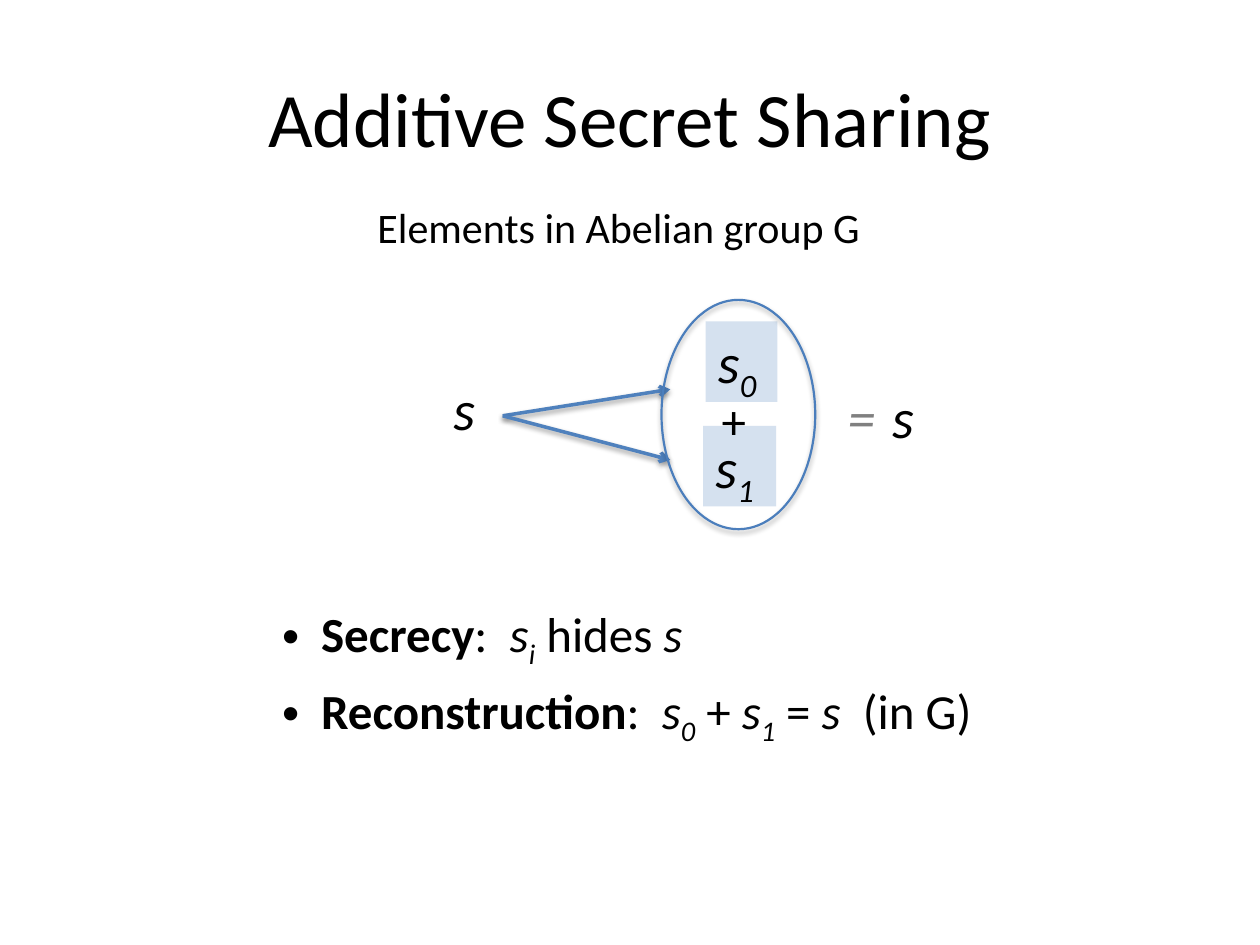
import pptx
import pptx.util
import pptx.dml.color
import pptx.enum.shapes
import pptx.enum.text
import pptx.oxml
import pptx.oxml.ns
from lxml import etree

RGB = pptx.dml.color.RGBColor
BLACK = RGB(0, 0, 0)
GRAY = RGB(0x80, 0x80, 0x80)
PALE = RGB(0xB9, 0xCD, 0xE5)
BLUE = RGB(0x4F, 0x81, 0xBD)
OUTLINE = RGB(0x4B, 0x7E, 0xBC)
WIDTH, HEIGHT = 10, 7.5
FONT = "Calibri"
SHAPE = pptx.enum.shapes.MSO_SHAPE
CENTER = pptx.enum.text.PP_ALIGN.CENTER


def inches(*values):
    return [pptx.util.Inches(v) for v in values]


def add_sub(parent, tag, **attrs):
    return etree.SubElement(parent, pptx.oxml.ns.qn(tag), **attrs)


def set_font(font, size, color=BLACK):
    font.name = FONT
    font.size = pptx.util.Pt(size)
    font.color.rgb = color


def add_runs(p, runs):
    for text, style in runs:
        r = p.add_run()
        r.text = text
        if "b" in style:
            r.font.bold = True
        if "i" in style:
            r.font.italic = True
        if "_" in style:
            r._r.get_or_add_rPr().set("baseline", "-25000")


def write(sp, runs, size, align=None):
    tf = sp.text_frame
    tf.word_wrap = False
    tf.vertical_anchor = pptx.enum.text.MSO_ANCHOR.TOP
    p = tf.paragraphs[0]
    p.alignment = align or pptx.enum.text.PP_ALIGN.LEFT
    set_font(p.font, size)
    add_runs(p, runs)
    return p


def add_label(s, box, runs, size, align=None):
    return write(s.shapes.add_textbox(*inches(*box)), runs, size, align)


def add_shadow(sp, dist, alpha):
    effects = add_sub(sp._element.spPr, "a:effectLst")
    shadow = add_sub(effects, "a:outerShdw", blurRad=str(pptx.util.Pt(3.1)),
                     dist=str(pptx.util.Pt(dist)), dir="5400000", rotWithShape="0")
    color = add_sub(shadow, "a:srgbClr", val=str(BLACK))
    add_sub(color, "a:alpha", val=str(alpha * 1000))


def add_share(s, box, index):
    sp = s.shapes.add_shape(SHAPE.RECTANGLE, *inches(*box))
    sp.shadow.inherit = False
    sp.fill.solid()
    sp.fill.fore_color.rgb = PALE
    color = sp._element.spPr.find(".//" + pptx.oxml.ns.qn("a:srgbClr"))
    add_sub(color, "a:alpha", val="60000")
    sp.line.fill.background()
    write(sp, [("s", "i"), (index, "i_")], 32)


def add_arrow(s, start, end):
    sp = s.shapes.add_connector(pptx.enum.shapes.MSO_CONNECTOR.STRAIGHT,
                                *inches(*start, *end))
    sp.line.color.rgb = BLUE
    sp.line.width = pptx.util.Pt(2)
    add_sub(sp.line._get_or_add_ln(), "a:tailEnd", type="arrow")
    add_shadow(sp, 1.6, 38)


def add_ellipse(s, box):
    sp = s.shapes.add_shape(SHAPE.OVAL, *inches(*box))
    sp.fill.background()
    sp.line.color.rgb = OUTLINE
    sp.line.width = pptx.util.Pt(1.25)
    add_shadow(sp, 1.8, 35)


def add_title(s, text):
    sp = s.shapes.title
    sp.left, sp.top, sp.width, sp.height = inches(
        0.05 * WIDTH, 0.04 * HEIGHT, 0.9 * WIDTH, HEIGHT / 6)
    tf = sp.text_frame
    tf.text = text
    tf.vertical_anchor = pptx.enum.text.MSO_ANCHOR.MIDDLE
    p = tf.paragraphs[0]
    p.alignment = CENTER
    set_font(p.font, 44)


def add_bullets(s, box, items):
    tf = s.shapes.add_textbox(*inches(*box)).text_frame
    tf.word_wrap = True
    for n, runs in enumerate(items):
        p = tf.add_paragraph() if n else tf.paragraphs[0]
        pPr = p._p.get_or_add_pPr()
        indent = pptx.util.Inches(0.31)
        pPr.set("marL", str(indent))
        pPr.set("indent", str(-indent))
        before = add_sub(pPr, "a:spcBef")
        add_sub(before, "a:spcPct", val="20000")
        add_sub(pPr, "a:buFont", typeface="Arial")
        add_sub(pPr, "a:buChar", char="•")
        set_font(p.font, 28)
        add_runs(p, runs)


def add_equals_secret(s, box):
    p = add_label(s, box, [("= ", "i"), (" ", "i"), ("s", "i")], 32)
    equals, gap, secret = p.runs
    equals.font.color.rgb = GRAY
    gap.font.size = pptx.util.Pt(10)


def main():
    prs = pptx.Presentation()
    prs.slide_width, prs.slide_height = inches(WIDTH, HEIGHT)
    s = prs.slides.add_slide(prs.slide_layouts[5])
    add_title(s, "Additive Secret Sharing")

    add_share(s, (5.6, 2.55, 0.57, 0.64), "0")
    add_share(s, (5.58, 3.38, 0.58, 0.64), "1")
    for y in (3.09, 3.65):
        add_arrow(s, (3.99, 3.3), (5.32, y))
    add_label(s, (3.5, 2.92, 0.49, 0.64), [("s", "i")], 32)

    add_bullets(s, (2.14, 4.74, 6.32, 1.87), [
        [("Secrecy", "b"), (":  ", ""), ("s", "i"), ("i", "i_"),
         (" hides ", ""), ("s", "i")],
        [("Reconstruction", "b"), (":  ", ""), ("s", "i"), ("0", "i_"),
         (" + ", ""), ("s", "i"), ("1", "i_"), (" = ", ""),
         ("s  ", "i"), ("(in G)", "")],
    ])

    add_label(s, (5.63, 3.05, 0.43, 0.57), [("+", "")], 28)
    add_equals_secret(s, (6.63, 2.99, 0.84, 0.64))
    add_ellipse(s, (5.25, 2.38, 1.22, 1.82))
    add_label(s, (2.87, 1.55, 4.08, 0.5),
              [("Elements in Abelian group G", "")], 24, CENTER)
    prs.save("out.pptx")


if __name__ == "__main__":
    main()
